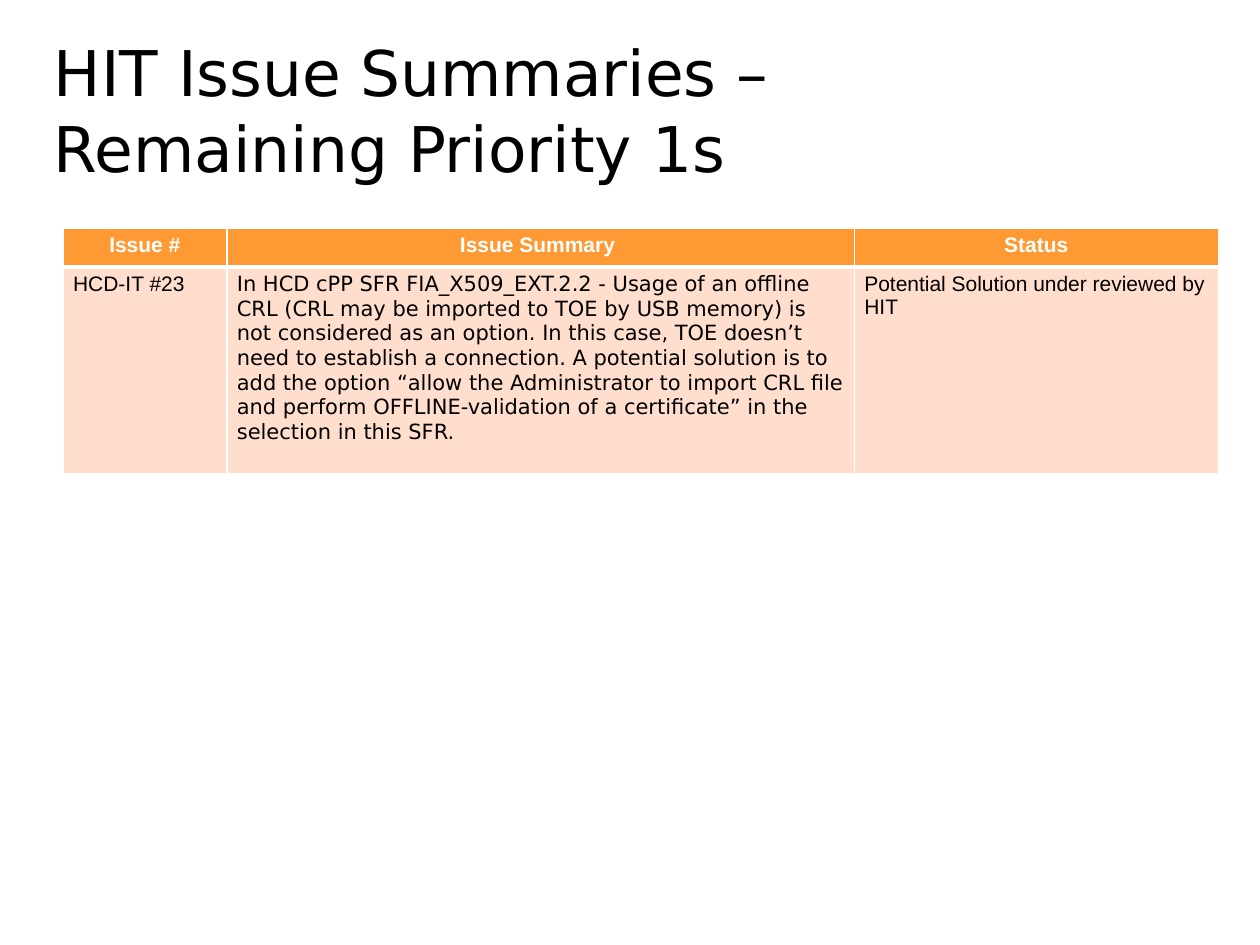
"""Build the slide summarising the remaining priority 1 HIT issues."""
from lxml import etree
from pptx import Presentation
from pptx.dml.color import RGBColor
from pptx.enum.text import MSO_ANCHOR, PP_ALIGN
from pptx.oxml.ns import qn
from pptx.util import Inches, Pt

BOTTOM = MSO_ANCHOR.BOTTOM
LEFT, CENTER = PP_ALIGN.LEFT, PP_ALIGN.CENTER
SANS, WIDE_SANS = "Arial", "DejaVu Sans"
COLORS = {"ink": "000000", "white": "FFFFFF", "header": "FF9933", "body": "FFDECE"}
TITLE_LINES = ["HIT Issue Summaries –", "Remaining Priority 1s"]
COLUMN_WIDTHS = [1.3, 4.98, 2.89]
ROW_HEIGHTS = [0.31, 1.64]
COLUMN_FONTS = [SANS, WIDE_SANS, SANS]
HEADINGS = ["Issue #", "Issue Summary ", "Status"]
ISSUE = [
    "HCD-IT #23",
    "In HCD cPP SFR FIA_X509_EXT.2.2 - Usage of an offline CRL (CRL may be "
    "imported to TOE by USB memory) is not considered as an option. In this case, "
    "TOE doesn’t need to establish a connection. A potential solution is to add "
    "the option “allow the Administrator to import CRL file and perform "
    "OFFLINE-validation of a certificate” in the selection in this SFR.",
    "Potential Solution under reviewed by HIT",
]


def rgb(name):
    return RGBColor.from_string(COLORS[name])


def set_attributes(target, values):
    for key, value in values.items():
        setattr(target, key, value)


def write_paragraph(paragraph, text, color, align=LEFT, **font_format):
    paragraph.alignment = align
    run = paragraph.add_run()
    run.text = text
    set_attributes(run.font, font_format)
    run.font.color.rgb = rgb(color)


def add_title(slide):
    title = slide.shapes.add_textbox(Inches(0.33), Inches(0.7), Inches(12), Inches(0.83))
    frame = title.text_frame
    set_attributes(frame, {
        "word_wrap": True, "vertical_anchor": BOTTOM,
        "margin_left": Inches(0.1), "margin_right": Inches(0.1),
        "margin_top": Inches(0.06), "margin_bottom": Inches(0.06),
    })
    for index, line in enumerate(TITLE_LINES):
        paragraph = frame.add_paragraph() if index else frame.paragraphs[0]
        write_paragraph(paragraph, line, "ink", name=WIDE_SANS, size=Pt(36))


def set_borders(cell, widths):
    properties = cell._tc.get_or_add_tcPr()
    for side, width in widths.items():
        border = etree.SubElement(properties, qn(f"a:ln{side}"), w=str(Pt(width)))
        fill = etree.SubElement(border, qn("a:solidFill"))
        etree.SubElement(fill, qn("a:srgbClr"), val=COLORS["white"])


def fill_row(table, row, texts, fonts, background, bottom_border, **text_format):
    for column, (text, font) in enumerate(zip(texts, fonts)):
        cell = table.cell(row, column)
        set_attributes(cell, {
            "margin_left": Inches(0.08), "margin_right": Inches(0.08),
            "margin_top": Inches(0.04), "margin_bottom": Inches(0.04),
        })
        set_borders(cell, {"L": 1, "R": 1, "T": 1 if row == 0 else 3, "B": bottom_border})
        cell.fill.solid()
        cell.fill.fore_color.rgb = rgb(background)
        write_paragraph(cell.text_frame.paragraphs[0], text, name=font, size=Pt(12), **text_format)


def add_issue_table(slide):
    table = slide.shapes.add_table(
        len(ROW_HEIGHTS), len(COLUMN_WIDTHS), Inches(0.5), Inches(1.81),
        Inches(sum(COLUMN_WIDTHS)), Inches(sum(ROW_HEIGHTS))).table
    for column, width in zip(table.columns, COLUMN_WIDTHS):
        column.width = Inches(width)
    for row, height in zip(table.rows, ROW_HEIGHTS):
        row.height = Inches(height)
    fill_row(table, 0, HEADINGS, [SANS] * 3, "header", 3, color="white", align=CENTER, bold=True)
    fill_row(table, 1, ISSUE, COLUMN_FONTS, "body", 1, color="ink", bold=False)


def main():
    deck = Presentation()
    deck.slide_width, deck.slide_height = Inches(10), Inches(7.5)
    slide = deck.slides.add_slide(deck.slide_layouts[6])
    add_issue_table(slide)
    add_title(slide)
    deck.save("out.pptx")


if __name__ == "__main__":
    main()
